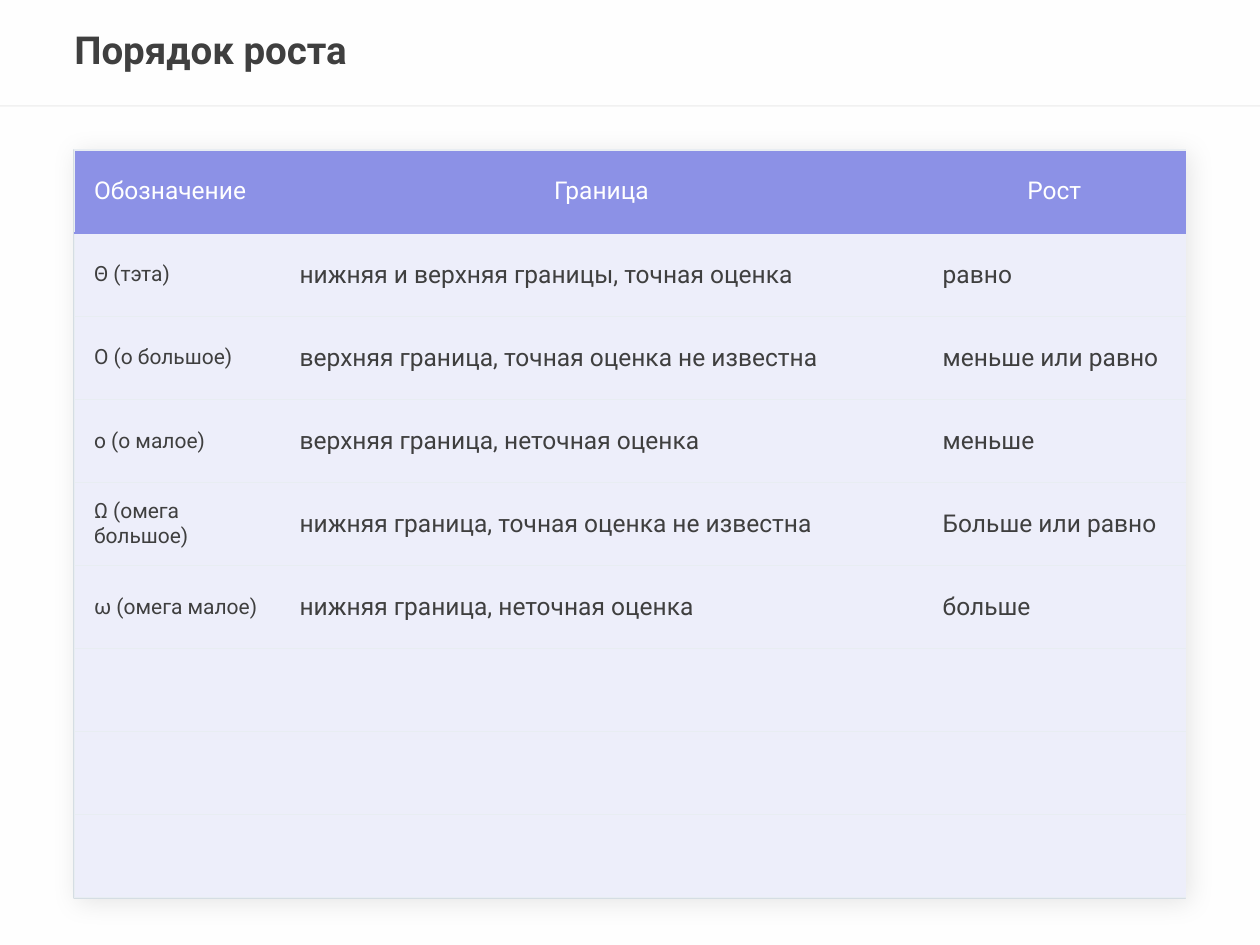
"""Build a slide with a table of asymptotic notations."""
from typing import NamedTuple, Optional

from lxml import etree
from pptx import Presentation
from pptx.dml.color import RGBColor
from pptx.enum.shapes import MSO_CONNECTOR as Connector, MSO_SHAPE as Shape
from pptx.enum.text import MSO_ANCHOR as Anchor, MSO_AUTO_SIZE as AutoSize, PP_ALIGN as Align
from pptx.oxml import parse_xml
from pptx.oxml.ns import nsdecls, qn
from pptx.util import Pt

FONT = "Roboto"
WHITE = RGBColor(0xFF, 0xFF, 0xFF)
PAPER = RGBColor(0xFE, 0xFE, 0xFE)
TEXT = RGBColor(0x3F, 0x3F, 0x3F)
GRAY = RGBColor(0x7F, 0x7F, 0x7F)
OUTLINE = RGBColor(0xD5, 0xDD, 0xE3)
GRID = RGBColor(0xE8, 0xED, 0xF2)
VIOLET = RGBColor(0x8C, 0x91, 0xE6)
LAVENDER = RGBColor(0xED, 0xEE, 0xFA)

SLIDE_W, SLIDE_H = 720, 540
HEADER_H = 60.5
LEFT, TOP = 42.5, 85.7
COLUMNS = (117.5, 367.5, 150)
ROW_H, ROW_COUNT = 47.5, 9
INSET = 11.25


class Row(NamedTuple):
    notation: str = ""
    bound: str = ""
    growth: str = ""


class Border(NamedTuple):
    color: RGBColor
    width: float


THIN = Border(GRID, 0.75)
THICK = Border(VIOLET, 1.5)
ROWS = [
    Row("Обозначение", "Граница", "Рост"),
    Row("Θ (тэта)", "нижняя и верхняя границы, точная оценка", "равно"),
    Row("O (о большое)", "верхняя граница, точная оценка не известна", "меньше или равно"),
    Row("o (о малое)", "верхняя граница, неточная оценка", "меньше"),
    Row("Ω (омега большое)", "нижняя граница, точная оценка не известна", "Больше или равно"),
    Row("ω (омега малое)", "нижняя граница, неточная оценка", "больше"),
]
ROWS += [Row()] * (ROW_COUNT - len(ROWS))


def set_alpha(fill, percent: int) -> None:
    color = fill.find(".//" + qn("a:srgbClr"))
    etree.SubElement(color, qn("a:alpha"), val=str(percent * 1000))


def add_border(cell, tag: str, border: Optional[Border]) -> None:
    ln = etree.SubElement(cell._tc.get_or_add_tcPr(), qn(f"a:{tag}"))
    if border is None:
        etree.SubElement(ln, qn("a:noFill"))
        return
    ln.set("w", str(Pt(border.width)))
    fill = etree.SubElement(ln, qn("a:solidFill"))
    etree.SubElement(fill, qn("a:srgbClr"), val=str(border.color))


def format_cell(cell, text: str, row: int, col: int) -> None:
    header = row == 0
    add_border(cell, "lnL", THIN if col == 0 else None)
    add_border(cell, "lnR", None)
    add_border(cell, "lnT", THICK if row == 1 else THIN)
    add_border(cell, "lnB", THICK if header else THIN)
    cell.fill.solid()
    cell.fill.fore_color.rgb = VIOLET if header else LAVENDER
    cell.vertical_anchor = Anchor.MIDDLE
    cell.margin_left = cell.margin_right = Pt(INSET)
    cell.margin_top = cell.margin_bottom = 0
    cell.text_frame.text = text
    p = cell.text_frame.paragraphs[0]
    p.alignment = Align.CENTER if header and col else Align.LEFT
    for r in p.runs:
        r.font.name = FONT
        r.font.size = Pt(14 if header or col else 12)
        r.font.bold = False
        r.font.color.rgb = WHITE if header else TEXT


def add_header(s) -> None:
    band = s.shapes.add_shape(Shape.RECTANGLE, 0, 0, Pt(SLIDE_W), Pt(HEADER_H))
    band.shadow.inherit = False
    band.fill.solid()
    band.fill.fore_color.rgb = WHITE
    set_alpha(band.element.spPr, 50)
    band.line.fill.background()
    rule = s.shapes.add_connector(Connector.STRAIGHT, 0, Pt(HEADER_H), Pt(SLIDE_W), Pt(HEADER_H))
    rule.line.width = Pt(0.75)
    rule.line.color.rgb = GRAY
    set_alpha(rule.element.spPr, 10)
    etree.SubElement(rule.element.spPr, qn("a:effectLst"))
    for sp in (band, rule):
        s.shapes.title.element.addprevious(sp.element)


def add_title(s, text: str) -> None:
    title = s.shapes.title
    title.left, title.top, title.width, title.height = Pt(LEFT), Pt(18.7), Pt(521.3), Pt(23.8)
    tf = title.text_frame
    tf.text = text
    tf.auto_size = AutoSize.NONE
    tf.vertical_anchor = Anchor.MIDDLE
    tf.margin_left = tf.margin_right = tf.margin_top = tf.margin_bottom = 0
    p = tf.paragraphs[0]
    p.alignment = Align.LEFT
    p.line_spacing = 0.8
    font = p.runs[0].font
    font.name, font.size, font.bold = FONT, Pt(22), True
    font.color.rgb = TEXT


def add_card(s) -> None:
    card = s.shapes.add_shape(Shape.ROUNDED_RECTANGLE, Pt(LEFT), Pt(TOP),
                              Pt(sum(COLUMNS)), Pt(ROW_H * ROW_COUNT))
    card.adjustments[0] = 0
    card.fill.solid()
    card.fill.fore_color.rgb = PAPER
    card.line.color.rgb = OUTLINE
    card.line.width = Pt(1)
    card.element.spPr.append(parse_xml(
        f'<a:effectLst {nsdecls("a")}>'
        f'<a:outerShdw blurRad="{Pt(15)}" dist="{Pt(3)}" dir="2700000" algn="tl" rotWithShape="0">'
        '<a:srgbClr val="000000"><a:alpha val="10000"/></a:srgbClr>'
        '</a:outerShdw></a:effectLst>'))


def add_notation_table(s) -> None:
    table = s.shapes.add_table(ROW_COUNT, len(COLUMNS), Pt(LEFT), Pt(TOP),
                               Pt(sum(COLUMNS)), Pt(ROW_H * ROW_COUNT)).table
    table.horz_banding = False
    for column, width in zip(table.columns, COLUMNS):
        column.width = Pt(width)
    for i, row in enumerate(ROWS):
        table.rows[i].height = Pt(ROW_H)
        for j, text in enumerate(row):
            format_cell(table.cell(i, j), text, i, j)


def main() -> None:
    prs = Presentation()
    prs.slide_width, prs.slide_height = Pt(SLIDE_W), Pt(SLIDE_H)
    s = prs.slides.add_slide(prs.slide_layouts[5])
    s.background.fill.solid()
    s.background.fill.fore_color.rgb = PAPER
    add_header(s)
    add_title(s, "Порядок роста")
    add_card(s)
    add_notation_table(s)
    prs.save("out.pptx")


if __name__ == "__main__":
    main()
